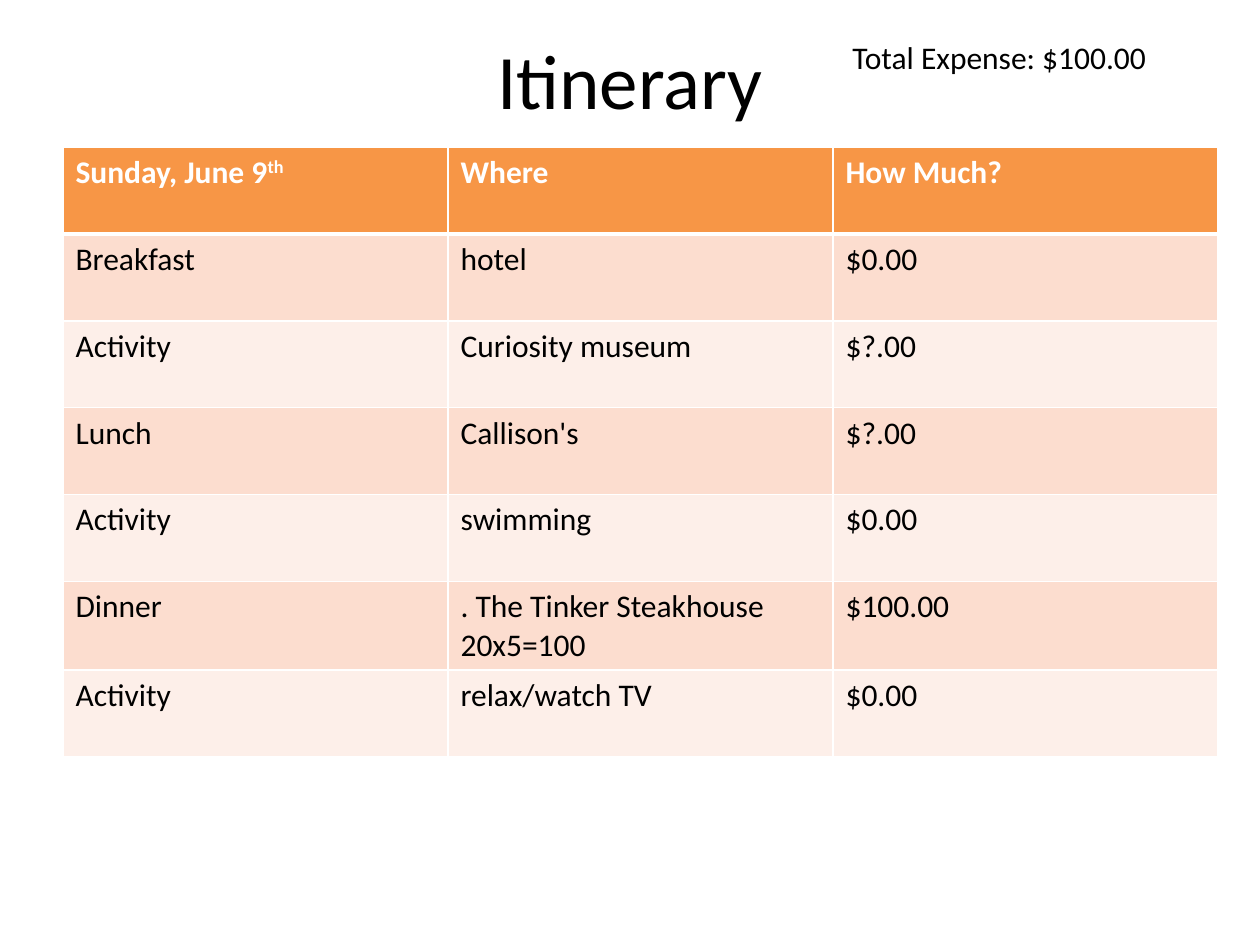
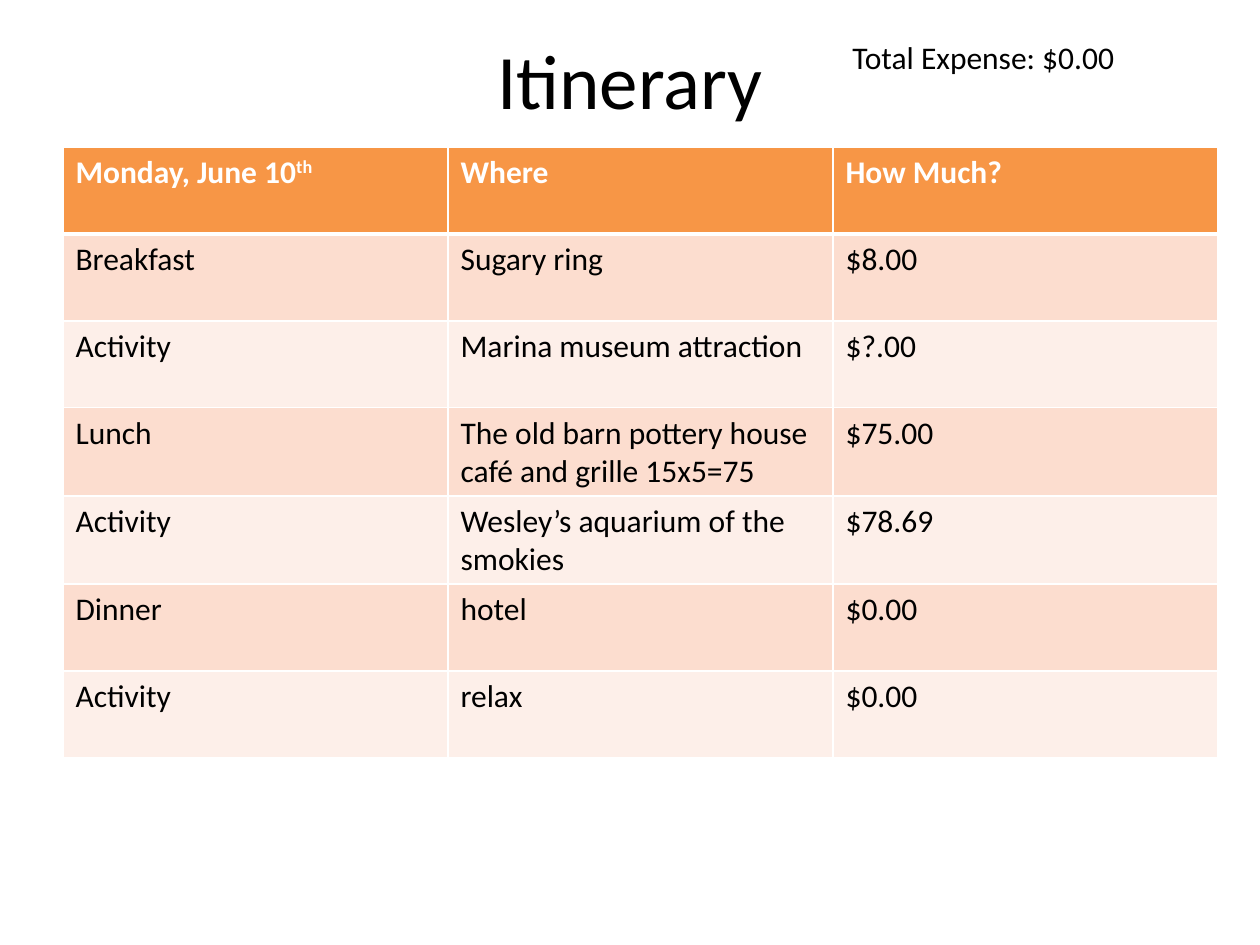
from lxml import etree
from pptx import Presentation
from pptx.dml.color import RGBColor
from pptx.enum.text import MSO_ANCHOR, PP_ALIGN
from pptx.oxml.ns import qn
from pptx.util import Inches, Pt

MIDDLE, TOP = MSO_ANCHOR.MIDDLE, MSO_ANCHOR.TOP
LEFT, CENTER = PP_ALIGN.LEFT, PP_ALIGN.CENTER

FONT = "Calibri"
BLACK = RGBColor(0x00, 0x00, 0x00)
WHITE = RGBColor(0xFF, 0xFF, 0xFF)
ORANGE = RGBColor(0xF7, 0x96, 0x46)
PEACH = RGBColor(0xFC, 0xDD, 0xCF)
PALE_PEACH = RGBColor(0xFD, 0xEF, 0xE9)

SLIDE_W, SLIDE_H = 10, 7.5
THIN, THICK = Pt(1), Pt(3)

# Regions: left, top, width, height in inches, from shares of the slide
TITLE_BOX = (0.05 * SLIDE_W, 0, 0.9 * SLIDE_W, SLIDE_H / 6)
TOTAL_BOX = (SLIDE_W * 2 / 3, SLIDE_H / 30, 0.31 * SLIDE_W, 0.05 * SLIDE_H)
PLAN_BOX = (0.05 * SLIDE_W, SLIDE_H * 7 / 45, SLIDE_W * 11 / 12, SLIDE_H * 0.64 + 0.03)

# Each day: date, total, then (event, where, cost); ^ starts a superscript
DAYS = [
    ("Sunday, June 9^th", "$100.00", [
        ("Breakfast", "hotel", "$0.00"),
        ("Activity", "Curiosity museum", "$?.00"),
        ("Lunch", "Callison's", "$?.00"),
        ("Activity", "swimming", "$0.00"),
        ("Dinner", ". The Tinker Steakhouse\n20x5=100", "$100.00"),
        ("Activity", "relax/watch TV", "$0.00"),
    ]),
    ("Monday, June 10^th", "$0.00", [
        ("Breakfast", "Sugary ring", "$8.00"),
        ("Activity", "Marina museum attraction", "$?.00"),
        ("Lunch", "The old barn pottery house café and grille 15x5=75", "$75.00"),
        ("Activity", "Wesley’s aquarium of the smokies", "$78.69"),
        ("Dinner", "hotel", "$0.00"),
        ("Activity", "relax", "$0.00"),
    ]),
]


def write_text(frame, text, size=18, color=BLACK, bold=False, align=LEFT, anchor=TOP):
    frame.word_wrap = True
    frame.vertical_anchor = anchor
    for line_no, line in enumerate(text.split("\n")):
        paragraph = frame.add_paragraph() if line_no else frame.paragraphs[0]
        paragraph.alignment = align
        for part_no, part in enumerate(line.split("^")):
            run = paragraph.add_run()
            run.text = part
            run.font.name, run.font.size = FONT, Pt(size)
            run.font.bold, run.font.color.rgb = bold, color
            if part_no:
                run.font._element.set("baseline", "30000")


def add_label(slide, box, text, **text_format):
    label = slide.shapes.add_textbox(*map(Inches, box))
    write_text(label.text_frame, text, **text_format)


def set_borders(cell, top, bottom):
    widths = {"a:lnL": THIN, "a:lnR": THIN, "a:lnT": top, "a:lnB": bottom}
    for side, width in widths.items():
        line = etree.SubElement(cell._tc.get_or_add_tcPr(), qn(side), w=str(width))
        fill = etree.SubElement(line, qn("a:solidFill"))
        etree.SubElement(fill, qn("a:srgbClr"), val=str(WHITE))


def add_plan(slide, box, date, events):
    rows = [(date, "Where", "How Much?"), *events]
    plan = slide.shapes.add_table(len(rows), len(rows[0]), *map(Inches, box)).table
    for row_no, row in enumerate(rows):
        header = row_no == 0
        band = ORANGE if header else PEACH if row_no % 2 else PALE_PEACH
        for column_no, text in enumerate(row):
            cell = plan.cell(row_no, column_no)
            # The thick rule parts the header from the first event
            set_borders(cell, top=THICK if row_no == 1 else THIN,
                        bottom=THICK if header else THIN)
            cell.fill.solid()
            cell.fill.fore_color.rgb = band
            write_text(cell.text_frame, text, bold=header,
                       color=WHITE if header else BLACK)


def add_day(deck, date, total, events):
    slide = deck.slides.add_slide(deck.slide_layouts[6])
    add_label(slide, TITLE_BOX, "Itinerary", size=44, align=CENTER, anchor=MIDDLE)
    add_label(slide, TOTAL_BOX, f"Total Expense: {total}")
    add_plan(slide, PLAN_BOX, date, events)


def main():
    deck = Presentation()
    deck.slide_width, deck.slide_height = Inches(SLIDE_W), Inches(SLIDE_H)
    for day in DAYS:
        add_day(deck, *day)
    deck.save("out.pptx")


if __name__ == "__main__":
    main()
